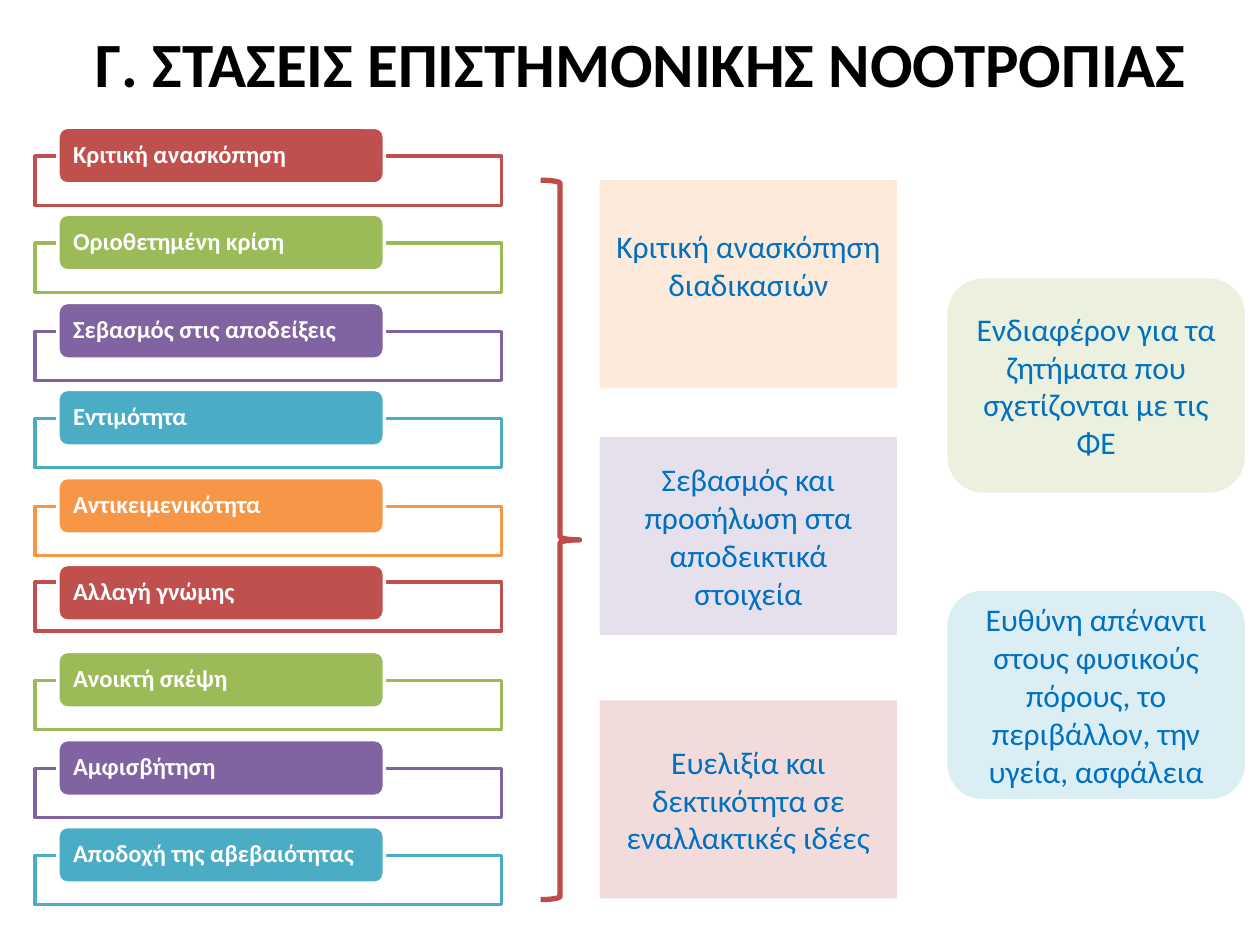
from dataclasses import dataclass

from pptx import Presentation
from pptx.dml.color import RGBColor
from pptx.enum.shapes import MSO_SHAPE
from pptx.enum.text import MSO_ANCHOR, PP_ALIGN
from pptx.util import Pt

RECT = MSO_SHAPE.RECTANGLE
ROUNDED = MSO_SHAPE.ROUNDED_RECTANGLE
BRACE = MSO_SHAPE.RIGHT_BRACE
MIDDLE = MSO_ANCHOR.MIDDLE
LEFT, CENTER = PP_ALIGN.LEFT, PP_ALIGN.CENTER
PX = 9144  # 100 px to the inch


@dataclass(frozen=True)
class Theme:
    font: str = "Calibri"
    title_size: int = 36
    card_size: int = 18
    bar_size: int = 14
    black: str = "000000"
    white: str = "FFFFFF"
    blue: str = "0070C0"
    brace: str = "BF4C48"
    red: str = "C0504D"
    green: str = "9BBB59"
    purple: str = "8064A2"
    aqua: str = "4BACC6"
    orange: str = "F79646"
    pale_orange: str = "FDEADA"
    pale_purple: str = "E6E0EC"
    pale_red: str = "F2DCDB"
    pale_green: str = "EBF1DE"
    pale_aqua: str = "DBEEF4"


T = Theme()

ATTITUDES = [
    "Κριτική ανασκόπηση", "Οριοθετημένη κρίση", "Σεβασμός στις αποδείξεις",
    "Εντιμότητα", "Αντικειμενικότητα", "Αλλαγή γνώμης", "Ανοικτή σκέψη",
    "Αμφισβήτηση", "Αποδοχή της αβεβαιότητας",
]
BAR_COLORS = [T.red, T.green, T.purple, T.aqua, T.orange]
RAISED_ROW = 5  # the frame of this row sits closer to its bar

# top, height, fill, bottom inset, text
PROCESS_CARDS = [
    (0, 165, T.pale_orange, 35, "Κριτική ανασκόπηση διαδικασιών"),
    (204, 157, T.pale_purple, 5, "Σεβασμός και προσήλωση στα αποδεικτικά στοιχεία"),
    (413, 157, T.pale_red, 5, "Ευελιξία και δεκτικότητα σε εναλλακτικές ιδέες"),
]
VALUE_CARDS = [
    (0, 170, T.pale_green, 5, "Ενδιαφέρον για τα ζητήματα που σχετίζονται με τις ΦΕ"),
    (248, 165, T.pale_aqua, 5,
     "Ευθύνη απέναντι στους φυσικούς πόρους, το περιβάλλον, την υγεία, ασφάλεια"),
]


def add_shape(s, kind, box, fill=None, line=None, width=2):
    sp = s.shapes.add_shape(kind, *(v * PX for v in box))
    sp.shadow.inherit = False
    if fill:
        sp.fill.solid()
        sp.fill.fore_color.rgb = RGBColor.from_string(fill)
    else:
        sp.fill.background()
    if line:
        sp.line.color.rgb = RGBColor.from_string(line)
        sp.line.width = Pt(width)
    else:
        sp.line.fill.background()
    return sp


def write(sp, text, size, color, bold=False, align=CENTER, insets=(10, 5, 10, 5)):
    """Fill a shape with one paragraph; insets run left, top, right, bottom."""
    tf = sp.text_frame
    tf.word_wrap = True
    tf.vertical_anchor = MIDDLE
    tf.margin_left, tf.margin_top, tf.margin_right, tf.margin_bottom = (
        v * PX for v in insets)
    p = tf.paragraphs[0]
    p.alignment = align
    r = p.add_run()
    r.text = text
    r.font.name = T.font
    r.font.size = Pt(size)
    r.font.bold = bold
    r.font.color.rgb = RGBColor.from_string(color)
    return p


def add_title(s, box, text):
    sp = s.shapes.add_textbox(*(v * PX for v in box))
    write(sp, text, T.title_size, T.black, bold=True)


def add_attitude_list(s, box):
    """Stack evenly spaced rows, each a bar overlapping an outlined frame."""
    x, y, w, h = box
    bar_h, frame_h = 45, 39
    pitch = (h - 62) / (len(ATTITUDES) - 1)
    for i, text in enumerate(ATTITUDES):
        top = y + round(i * pitch)
        color = BAR_COLORS[i % len(BAR_COLORS)]
        drop = 14 if i == RAISED_ROW else 23
        add_shape(s, RECT, (x, top + drop, w, frame_h), T.white, color)
        bar = add_shape(s, ROUNDED, (x + 18, top, w * 7 // 10, bar_h), color, T.white)
        p = write(bar, text, T.bar_size, T.white, True, LEFT, (10, 0, 10, 0))
        p.line_spacing = 0.9


def add_cards(s, kind, box, cards):
    x, y, w = box
    for top, height, fill, bottom, text in cards:
        card = add_shape(s, kind, (x, y + top, w, height), fill)
        write(card, text, T.card_size, T.blue, insets=(10, 5, 10, bottom))


def main():
    prs = Presentation()
    prs.slide_width, prs.slide_height = 1000 * PX, 750 * PX
    s = prs.slides.add_slide(prs.slide_layouts[6])
    add_title(s, (59, 0, 900, 99), "Γ. ΣΤΑΣΕΙΣ ΕΠΙΣΤΗΜΟΝΙΚΗΣ ΝΟΟΤΡΟΠΙΑΣ")
    add_attitude_list(s, (28, 101, 370, 617))
    add_cards(s, RECT, (476, 143, 236), PROCESS_CARDS)
    add_cards(s, ROUNDED, (752, 221, 236), VALUE_CARDS)
    add_shape(s, BRACE, (429, 143, 31, 571), line=T.brace, width=3)
    prs.save("out.pptx")


if __name__ == "__main__":
    main()
